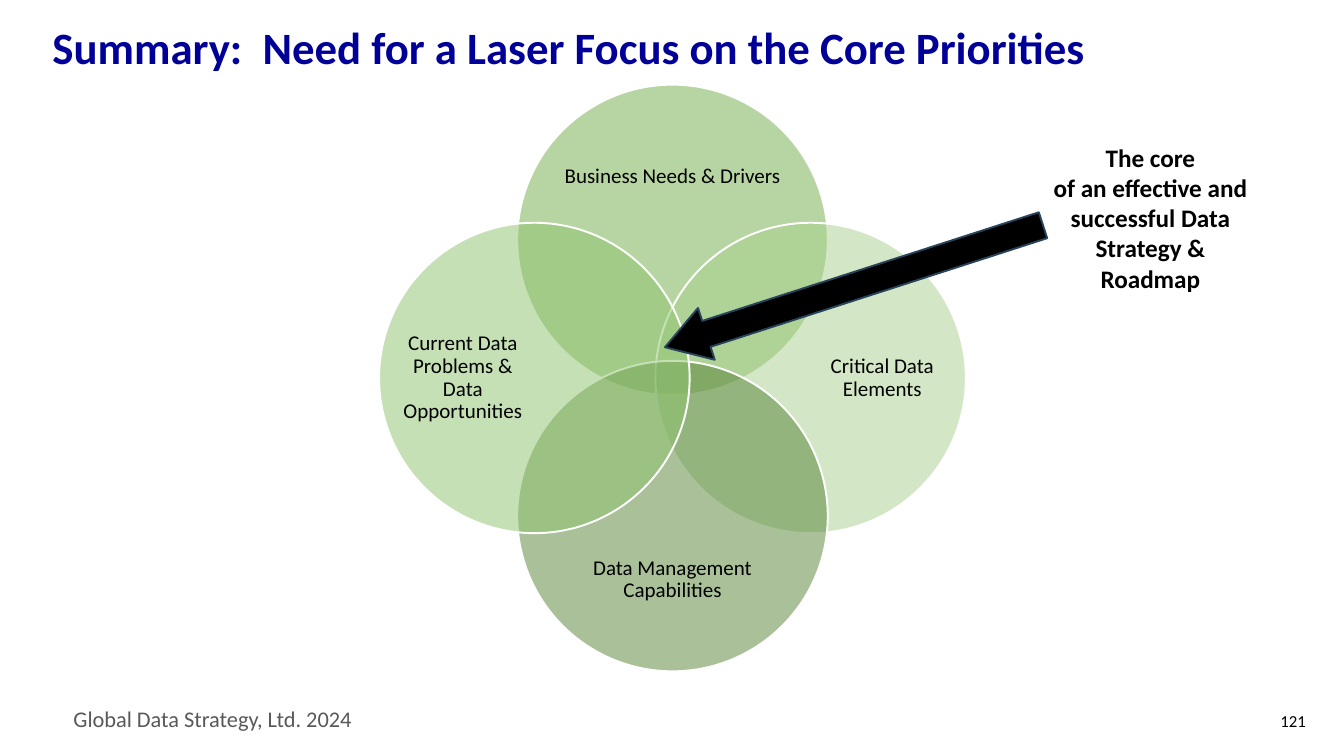
from lxml import etree
from pptx import Presentation
from pptx.dml.color import RGBColor
from pptx.enum.shapes import MSO_SHAPE
from pptx.enum.text import MSO_ANCHOR, MSO_AUTO_SIZE, PP_ALIGN
from pptx.oxml.ns import qn
from pptx.util import Inches, Pt

COLORS = {
    "title": "000099", "text": "000000", "footer": "595959", "outline": "FFFFFF",
    "needs": "70AD47", "elements": "A9D18E", "management": "548235",
    "problems": "8FC36F", "arrow": "000000", "arrow_line": "28445D",
}


class SlideBuilder:
    font = "Calibri"
    line_width = Pt(1.35)

    def __init__(self, page):
        self.page = page

    def color(self, name):
        return RGBColor.from_string(COLORS[name])

    def format(self, paragraph, size, color, bold=False, align=PP_ALIGN.LEFT, spacing=1.0):
        paragraph.alignment = align
        paragraph.line_spacing = spacing
        paragraph.font.name = self.font
        paragraph.font.size = Pt(size)
        paragraph.font.bold = bold
        paragraph.font.color.rgb = self.color(color)

    def title(self, text, left, top, width, height):
        box = self.page.shapes.title
        box.left, box.top, box.width, box.height = map(Inches, (left, top, width, height))
        frame = box.text_frame
        frame.text = text
        frame.auto_size = MSO_AUTO_SIZE.NONE
        frame.vertical_anchor = MSO_ANCHOR.MIDDLE
        self.format(frame.paragraphs[0], 32, "title", bold=True, spacing=0.9)

    def text(self, lines, left, top, width, height, size, color="text",
             anchor=MSO_ANCHOR.TOP, inset=None, **style):
        box = self.page.shapes.add_textbox(*map(Inches, (left, top, width, height)))
        frame = box.text_frame
        frame.word_wrap = True
        frame.vertical_anchor = anchor
        if inset is not None:
            frame.margin_left = frame.margin_right = Inches(inset)
            frame.margin_top = frame.margin_bottom = Inches(inset)
        frame.text = "\n".join(lines)
        for paragraph in frame.paragraphs:
            self.format(paragraph, size, color, **style)

    def shape(self, kind, left, top, width, height, fill, line, opacity=100):
        shape = self.page.shapes.add_shape(kind, *map(Inches, (left, top, width, height)))
        shape.shadow.inherit = False
        shape.fill.solid()
        shape.fill.fore_color.rgb = self.color(fill)
        shape.line.color.rgb = self.color(line)
        shape.line.width = self.line_width
        if opacity < 100:
            fill_color = shape.fill._xPr.find(qn("a:solidFill"))[0]
            etree.SubElement(fill_color, qn("a:alpha")).set("val", str(opacity * 1000))
        return shape

    def venn_circle(self, label, fill, across, down):
        # Circles and labels sit at fixed distances from the diagram's centre
        center_x, center_y, diameter, offset = 6.67, 3.75, 3.08, 1.37
        self.shape(MSO_SHAPE.OVAL, center_x + across * offset - diameter / 2,
                   center_y + down * offset - diameter / 2, diameter, diameter,
                   fill, "outline", opacity=50)
        width, height, reach = (1.19, 2.37, 2.08) if across else (2.37, 0.98, 2.0)
        self.text([label], center_x + across * reach - width / 2,
                  center_y + down * reach - height / 2, width, height, 15,
                  anchor=MSO_ANCHOR.MIDDLE, inset=0, align=PP_ALIGN.CENTER, spacing=0.9)


def main():
    deck = Presentation()
    deck.slide_width, deck.slide_height = Inches(13.33), Inches(7.5)
    builder = SlideBuilder(deck.slides.add_slide(deck.slide_layouts[5]))

    # Title, footer and page number
    builder.title("Summary:  Need for a Laser Focus on the Core Priorities",
                  0.42, 0.16, 11.5, 0.68)
    builder.text(["Global Data Strategy, Ltd. 2024"], 0.63, 6.95, 3.62, 0.37, 16, "footer")
    builder.text(["121"], 12.42, 6.95, 0.63, 0.4, 12,
                 anchor=MSO_ANCHOR.MIDDLE, align=PP_ALIGN.RIGHT)

    # Venn diagram: label, fill, direction from the centre
    for circle in (
        ("Business Needs & Drivers", "needs", 0, -1),
        ("Critical Data Elements", "elements", 1, 0),
        ("Data Management Capabilities", "management", 0, 1),
        ("Current Data Problems & Data Opportunities", "problems", -1, 0),
    ):
        builder.venn_circle(*circle)

    # Arrow to the core and its callout
    arrow = builder.shape(MSO_SHAPE.LEFT_ARROW, 6.5, 2.57, 3.94, 0.54, "arrow", "arrow_line")
    arrow.rotation = 342.1
    arrow.adjustments[0], arrow.adjustments[1] = 0.5, 0.8
    builder.text(["The core", "of an effective and successful Data Strategy & Roadmap"],
                 10.35, 1.36, 2.12, 1.62, 18, bold=True, align=PP_ALIGN.CENTER)

    deck.save("out.pptx")


if __name__ == "__main__":
    main()
